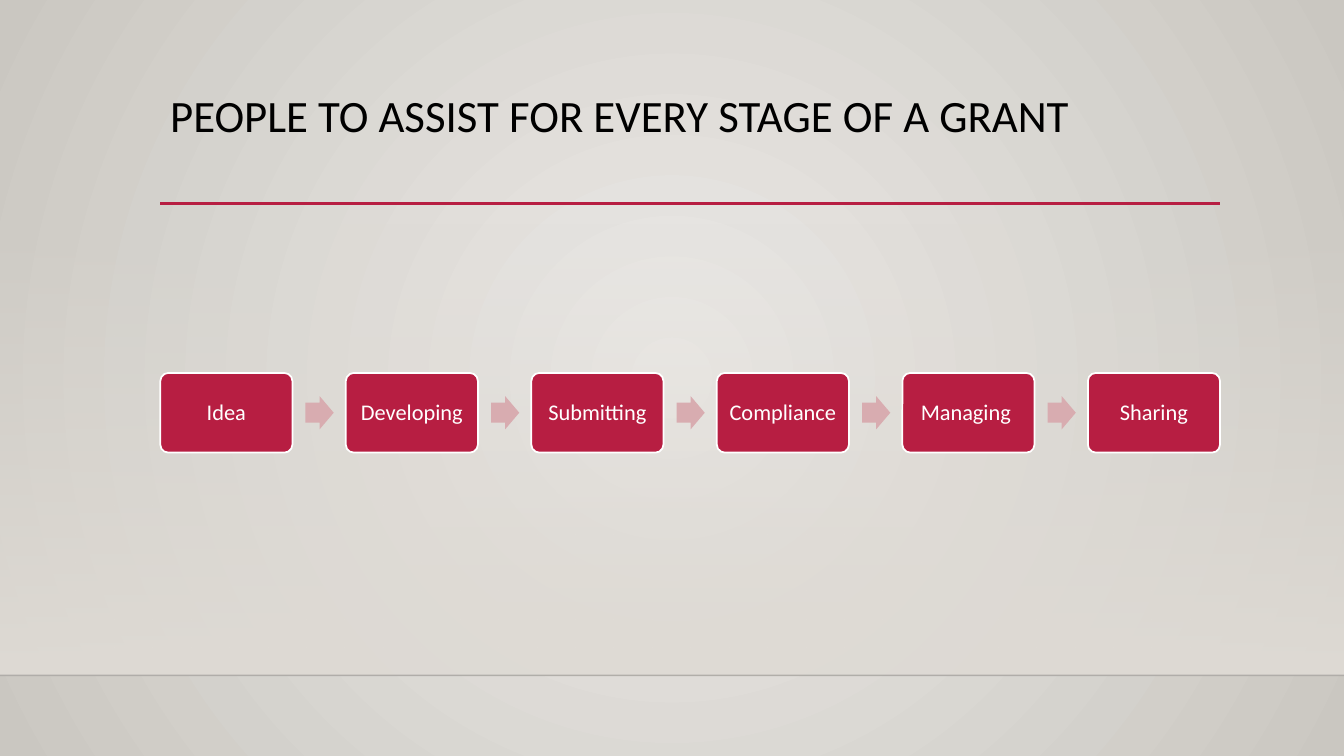
from lxml import etree
from pptx import Presentation
from pptx.dml.color import RGBColor
from pptx.enum.shapes import MSO_CONNECTOR, MSO_SHAPE
from pptx.enum.text import MSO_ANCHOR, PP_ALIGN
from pptx.oxml.ns import qn
from pptx.util import Inches, Pt

COLORS = {
    "glow": "ECEAE7",
    "edge": "CAC7C1",
    "wall": "DFDBD5",
    "floor": "000001",
    "crimson": "B71E42",
    "arrow": "D8ACB0",
    "title": "000000",
    "white": "FFFFFF",
}
FONT = "Calibri"
STAGES = ["Idea", "Developing", "Submitting", "Compliance", "Managing ", "Sharing"]
LEFT, PITCH = 1.59, 1.84
STAGE_TOP, STAGE_W, STAGE_H = 3.7, 1.31, 0.79
ARROW_W, ARROW_H, ARROW_OFFSET = 0.28, 0.33, 1.44


def rgb(name):
    return RGBColor.from_string(COLORS[name])


def set_alpha(color_element, percent):
    alpha = etree.SubElement(color_element, qn("a:alpha"))
    alpha.set("val", str(percent * 1000))


def set_gradient(fill, *names):
    fill.gradient()
    for stop, name, position in zip(fill.gradient_stops, names, (0, 1)):
        stop.color.rgb = rgb(name)
        stop.position = position


def add_background(slide):
    set_gradient(slide.background.fill, "glow", "edge")
    gradient = slide.element.find(".//" + qn("a:gradFill"))
    gradient.remove(gradient.find(qn("a:lin")))
    circle = etree.SubElement(gradient, qn("a:path"), {"path": "circle"})
    center = {side: "50000" for side in "ltrb"}
    etree.SubElement(circle, qn("a:fillToRect"), center)


def add_shape(slide, kind, left, top, width, height):
    shape = slide.shapes.add_shape(
        kind, Inches(left), Inches(top), Inches(width), Inches(height))
    shape.shadow.inherit = False
    shape.line.fill.background()
    return shape


def add_wall(slide):
    wall = add_shape(slide, MSO_SHAPE.RECTANGLE, 0, 2.21, 13.33, 4.49)
    set_gradient(wall.fill, "wall", "wall")
    wall.fill.gradient_angle = 270
    set_alpha(wall.element.find(".//" + qn("a:srgbClr")), 0)


def add_rule(slide, left, right, y, color, weight, opacity=100):
    rule = slide.shapes.add_connector(
        MSO_CONNECTOR.STRAIGHT, Inches(left), Inches(y), Inches(right), Inches(y))
    rule.line.color.rgb = rgb(color)
    rule.line.width = Pt(weight)
    if opacity < 100:
        set_alpha(rule.element.find(".//" + qn("a:srgbClr")), opacity)
    etree.SubElement(rule.element.spPr, qn("a:effectLst"))


def set_text(frame, text, size, color, align):
    frame.word_wrap = True
    paragraph = frame.paragraphs[0]
    paragraph.text = text
    paragraph.alignment = align
    paragraph.line_spacing = 0.9
    paragraph.font.name = FONT
    paragraph.font.size = Pt(size)
    paragraph.font.color.rgb = rgb(color)


def add_title(slide, text):
    title = slide.shapes.add_textbox(
        Inches(LEFT), Inches(0.88), Inches(10.5), Inches(1.15))
    set_text(title.text_frame, text, 32, "title", PP_ALIGN.LEFT)


def add_stage(slide, left, label):
    stage = add_shape(slide, MSO_SHAPE.ROUNDED_RECTANGLE,
                      left, STAGE_TOP, STAGE_W, STAGE_H)
    stage.adjustments[0] = 0.1
    stage.fill.solid()
    stage.fill.fore_color.rgb = rgb("crimson")
    stage.line.color.rgb = rgb("white")
    stage.line.width = Pt(1.25)
    frame = stage.text_frame
    frame.margin_left = frame.margin_right = Inches(0.07)
    frame.vertical_anchor = MSO_ANCHOR.MIDDLE
    set_text(frame, label, 16, "white", PP_ALIGN.CENTER)


def add_arrow(slide, left):
    top = STAGE_TOP + (STAGE_H - ARROW_H) / 2
    arrow = add_shape(slide, MSO_SHAPE.RIGHT_ARROW, left, top, ARROW_W, ARROW_H)
    arrow.adjustments[0] = 0.6
    arrow.adjustments[1] = 0.5
    arrow.fill.solid()
    arrow.fill.fore_color.rgb = rgb("arrow")


def main():
    prs = Presentation()
    prs.slide_width, prs.slide_height = Inches(13.33), Inches(7.5)
    slide = prs.slides.add_slide(prs.slide_layouts[6])

    # Backdrop: wall and floor edge
    add_background(slide)
    add_wall(slide)
    add_rule(slide, 0, 13.33, 6.7, "floor", 1, opacity=20)

    # Heading
    add_rule(slide, LEFT, 12.1, 2.02, "crimson", 2.5)
    add_title(slide, "PEOPLE TO ASSIST FOR EVERY STAGE OF A GRANT")

    # Grant stages, with an arrow between neighbours
    for i, label in enumerate(STAGES):
        left = LEFT + i * PITCH
        add_stage(slide, left, label)
        if i < len(STAGES) - 1:
            add_arrow(slide, left + ARROW_OFFSET)

    prs.save("out.pptx")


if __name__ == "__main__":
    main()
